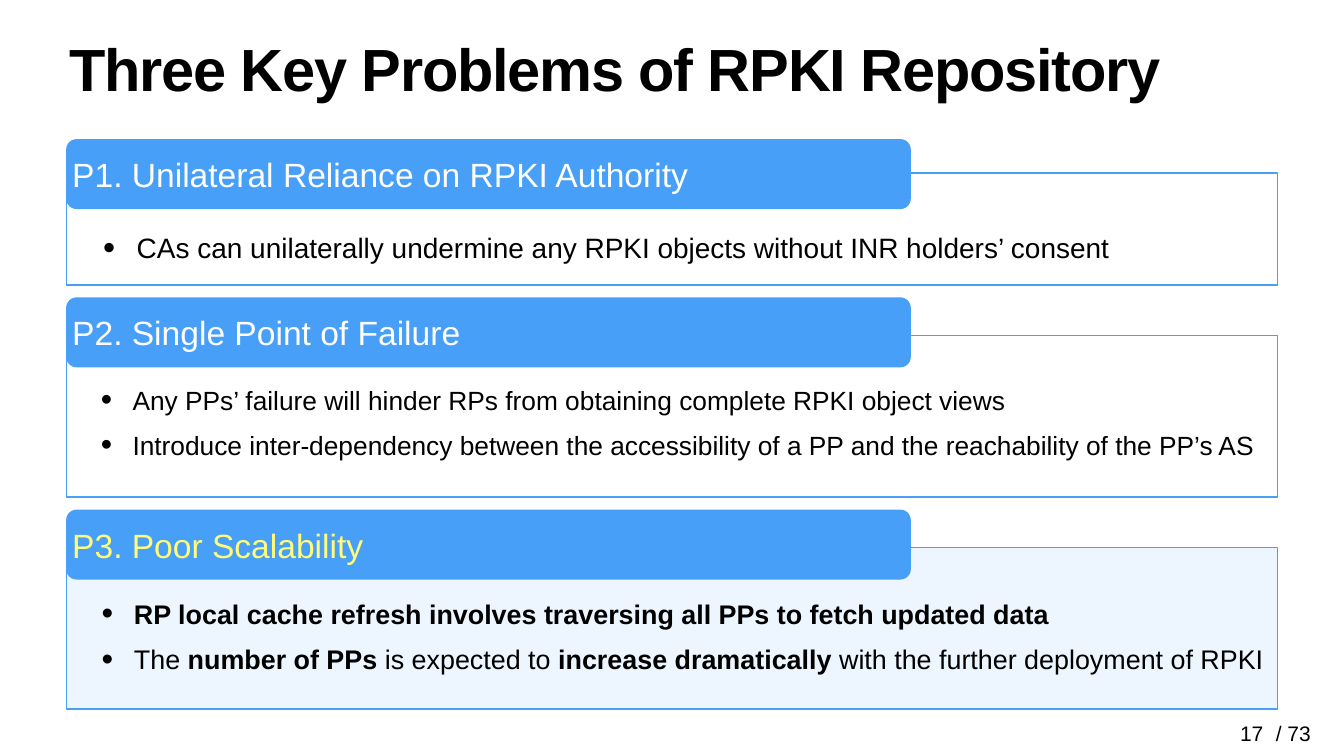
"""Build the slide on three key problems of the RPKI repository."""
import pptx
import pptx.util
import pptx.dml.color
import pptx.enum.shapes
import pptx.enum.text
import pptx.oxml
import pptx.oxml.ns
from pptx.util import Pt

BLUE = pptx.dml.color.RGBColor(0x47, 0x9F, 0xF8)
BLACK = pptx.dml.color.RGBColor(0x00, 0x00, 0x00)
WHITE = pptx.dml.color.RGBColor(0xFF, 0xFF, 0xFF)
YELLOW = pptx.dml.color.RGBColor(0xFF, 0xFC, 0x79)
PALE_BLUE = pptx.dml.color.RGBColor(0xED, 0xF5, 0xFE)
ANCHOR = pptx.enum.text.MSO_ANCHOR
ALIGN = pptx.enum.text.PP_ALIGN
SHAPE = pptx.enum.shapes.MSO_SHAPE
LEFT, WIDTH, INSET = 95, 1730, 4.3


def set_frame(frame, anchor, wrap=True, top=INSET):
    values = {"margin_left": Pt(INSET), "margin_right": Pt(INSET),
              "margin_top": Pt(top), "margin_bottom": Pt(INSET),
              "auto_size": pptx.enum.text.MSO_AUTO_SIZE.NONE,
              "vertical_anchor": anchor, "word_wrap": wrap}
    for name, value in values.items():
        setattr(frame, name, value)


def add_span(para, text, size, color, bold=False):
    span = para.add_run()
    span.text = text
    for name, value in {"name": "Arial", "size": Pt(size), "bold": bold}.items():
        setattr(span.font, name, value)
    span.font.color.rgb = color
    return span


deck = pptx.Presentation()
deck.slide_width, deck.slide_height = Pt(1920), Pt(1080)
page = deck.slides.add_slide(deck.slide_layouts[5])

title = page.shapes.title
title.left, title.top, title.width, title.height = Pt(LEFT), Pt(60.5), Pt(WIDTH), Pt(162)
set_frame(title.text_frame, ANCHOR.TOP)
para = title.text_frame.paragraphs[0]
para.alignment, para.line_spacing = ALIGN.LEFT, 0.8
span = add_span(para, "Three Key Problems of RPKI Repository", 85, BLACK, True)
span.font._element.set("spc", "-170")

problems = [
    {"heading": "P1. Unilateral Reliance on RPKI Authority", "color": WHITE,
     "header_top": 198.7, "top": 247, "height": 160, "fill": None, "inset": 88,
     "size": 40, "indent": 48, "spacing": 0.9, "before": 30,
     "bullets": [[("CAs can unilaterally undermine any RPKI objects without INR holders’ consent", False)]]},
    {"heading": "P2. Single Point of Failure", "color": WHITE,
     "header_top": 424.8, "top": 479.5, "height": 230.4, "fill": None, "inset": 78,
     "size": 37.6, "indent": 45, "spacing": 0.8, "before": 28,
     "bullets": [[("Any PPs’ failure will hinder RPs from obtaining complete RPKI object views", False)],
                 [("Introduce inter-dependency between the accessibility of a PP "
                   "and the reachability of the PP’s AS", False)]]},
    {"heading": "P3. Poor Scalability", "color": YELLOW,
     "header_top": 728, "top": 782.6, "height": 230.4, "fill": PALE_BLUE, "inset": 80,
     "size": 38.4, "indent": 46, "spacing": 0.8, "before": 28,
     "bullets": [[("RP local cache refresh involves traversing all PPs to fetch updated data", True)],
                 [("The ", False), ("number of PPs", True), (" is expected to ", False),
                  ("increase dramatically", True),
                  (" with the further deployment of RPKI", False)]]},
]

for problem in problems:
    box = page.shapes.add_shape(SHAPE.RECTANGLE, Pt(LEFT), Pt(problem["top"]),
                                Pt(WIDTH), Pt(problem["height"]))
    box.shadow.inherit = False
    box.line.color.rgb, box.line.width = BLUE, Pt(2)
    if problem["fill"] is None:
        box.fill.background()
    else:
        box.fill.solid()
        box.fill.fore_color.rgb = problem["fill"]
    set_frame(box.text_frame, ANCHOR.TOP, top=problem["inset"])
    for number, spans in enumerate(problem["bullets"]):
        para = box.text_frame.add_paragraph() if number else box.text_frame.paragraphs[0]
        para.alignment, para.line_spacing = ALIGN.LEFT, problem["spacing"]
        para.space_before = Pt(problem["before"] if number else 0)
        properties = para._p.get_or_add_pPr()
        properties.set("marL", str(Pt(2 * problem["indent"])))
        properties.set("indent", str(Pt(-problem["indent"])))
        for tag, attribute, value in [("buSzPct", "val", "123000"),
                                      ("buFont", "typeface", "Arial"),
                                      ("buChar", "char", "•")]:
            bullet = pptx.oxml.parse_xml(f'<a:{tag} {pptx.oxml.ns.nsdecls("a")} {attribute}="{value}"/>')
            properties.append(bullet)
        for text, bold in spans:
            add_span(para, text, problem["size"], BLACK, bold)

    header = page.shapes.add_shape(SHAPE.ROUNDED_RECTANGLE, Pt(94.5), Pt(problem["header_top"]),
                                   Pt(1206.7), Pt(100))
    header.shadow.inherit = False
    header.adjustments[0] = 0.15
    header.fill.solid()
    header.fill.fore_color.rgb = BLUE
    header.line.fill.background()
    set_frame(header.text_frame, ANCHOR.MIDDLE)
    para = header.text_frame.paragraphs[0]
    para.alignment = ALIGN.LEFT
    add_span(para, problem["heading"], 48, problem["color"])

for text, left, width in [("17", 1766.9, 42.5), ("/ 73", 1817.3, 60.5)]:
    box = page.shapes.add_textbox(Pt(left), Pt(1026.7), Pt(width), Pt(43.2))
    set_frame(box.text_frame, ANCHOR.BOTTOM, wrap=False)
    para = box.text_frame.paragraphs[0]
    para.alignment = ALIGN.CENTER
    add_span(para, text, 30, BLACK)

deck.save("out.pptx")
